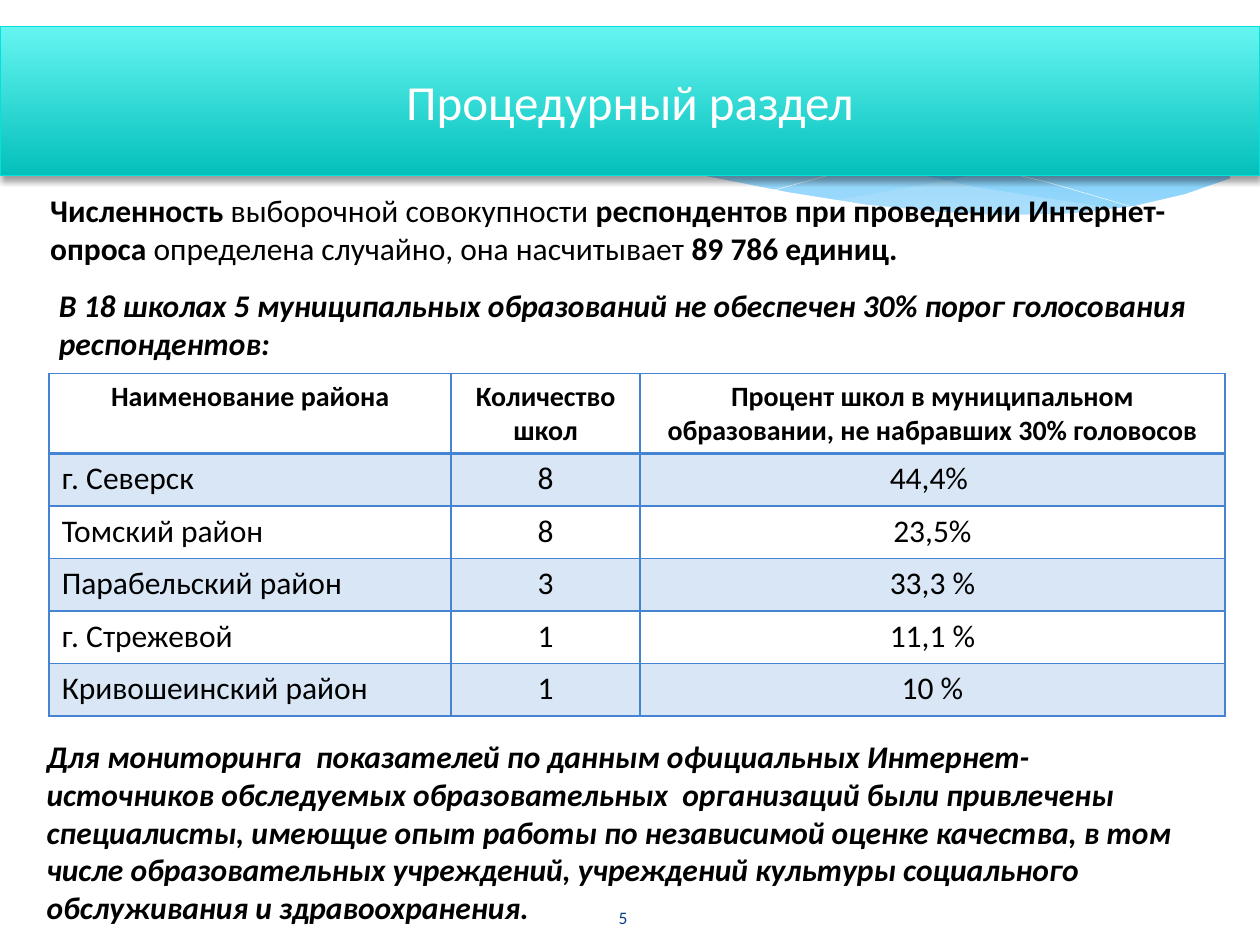
from lxml import etree
from pptx import Presentation
from pptx import util as u
from pptx.dml.color import RGBColor
from pptx.enum import shapes, text
from pptx.oxml.ns import qn

Pt = u.Pt
CENTER, LEFT = text.PP_ALIGN.CENTER, text.PP_ALIGN.LEFT

THEME = {
    "font": "Calibri", "ink": "000000", "white": "FFFFFF", "number": "073E87",
    "sky": ("0293E0", "83D3FE"), "wave": "C6E7FC",
    "banner": ("65F5F1", "04C0BB"), "banner_line": "05E0DB", "table": "4584D3",
    "title_size": 28, "body_size": 18, "head_size": 16, "number_size": 10,
}

# Content
TITLE = "Процедурный раздел"
PAGE_NUMBER = "5"
# Each run: wording, bold, italic
SAMPLE = [
    ("Численность", True, False),
    (" выборочной совокупности ", False, False),
    ("респондентов при проведении Интернет-опроса ", True, False),
    ("определена случайно, она насчитывает ", False, False),
    ("89 786 единиц.", True, False),
]
THRESHOLD = [("В 18 школах 5 муниципальных образований не обеспечен 30% порог "
              "голосования респондентов:", True, True)]
MONITORING = [("Для мониторинга  показателей по данным официальных "
               "Интернет-источников обследуемых образовательных  организаций были "
               "привлечены специалисты, имеющие опыт работы по независимой оценке "
               "качества, в том числе образовательных учреждений, учреждений культуры "
               "социального обслуживания и здравоохранения.", True, True)]
PARAGRAPHS = [  # runs and box: left, top, width, height
    (MONITORING, (19.5, 417.6, 669, 116.6)),
    (SAMPLE, (21.6, 105.8, 695.5, 51)),
    (THRESHOLD, (26.6, 159.8, 662.4, 51)),
]
DISTRICTS = [
    ("Наименование района", "Количество школ",
     "Процент школ в муниципальном образовании, не набравших 30% головосов"),
    ("г. Северск", "8", "44,4% "),
    ("Томский район", "8", "23,5%"),
    ("Парабельский район", "3", "33,3 %"),
    ("г. Стрежевой", "1", "11,1 %"),
    ("Кривошеинский район", "1", "10 %"),
]
COLUMN_WIDTHS = (229.7, 108, 334.1)
HEAD_HEIGHT, ROW_HEIGHT = 45.7, 30

# Outlines of the wave decoration
RIGHT_WAVE = [(702, 68), (663, 75), (620, 85), (542, 103), (476, 115), (518, 120),
              (562, 124), (601, 124), (634, 120), (663, 115), (683, 109), (703, 102),
              (703, 68)]
LONG_WAVE = [(643, 120), (603, 114), (558, 107), (508, 96), (453, 84), (410, 73),
             (370, 66), (318, 60), (260, 58), (206, 62), (261, 70), (323, 84),
             (382, 97), (433, 108), (490, 117), (539, 122), (581, 125), (617, 123)]
FALLING_LINE = [(222, 65), (251, 60), (300, 59), (352, 60), (401, 66), (458, 74),
                (500, 82), (547, 92), (598, 104), (653, 120)]
RISING_LINE = [(441, 109), (500, 93), (559, 80), (623, 67), (675, 60), (702, 58)]
WHITE_EDGE = [(703, 102), (677, 111), (647, 118), (612, 122), (571, 123), (536, 121),
              (495, 117), (451, 110), (400, 100), (342, 87), (282, 73), (228, 63),
              (180, 58), (127, 56), (86, 59), (48, 66), (26, 73), (17, 77),
              (17, 161), (703, 161)]
WAVES = [  # points, fill, opacity in percent; no fill means a white line
    (RIGHT_WAVE, THEME["wave"], 29),
    (LONG_WAVE, THEME["wave"], 40),
    (FALLING_LINE, None, None),
    (RISING_LINE, None, None),
    (WHITE_EDGE, THEME["white"], 100),
]


def rgb(name):
    return RGBColor.from_string(name)


def child(parent, tag, **attributes):
    element = etree.SubElement(parent, qn(tag))
    for key, value in attributes.items():
        element.set(key, str(value))
    return element


def set_fill(fill, parent, color, opacity=100):
    fill.solid()
    fill.fore_color.rgb = rgb(color)
    if opacity < 100:
        color_element = parent.find(qn("a:solidFill"))[0]
        child(color_element, "a:alpha", val=opacity * 1000)


def set_gradient(fill, colors, end):
    fill.gradient()
    fill.gradient_angle = 270  # counter-clockwise: top to bottom
    for stop, color, position in zip(fill.gradient_stops, colors, (0, end)):
        stop.color.rgb = rgb(color)
        stop.position = position


def write(frame, runs, size=THEME["body_size"], color=THEME["ink"], align=LEFT,
          anchor=text.MSO_ANCHOR.TOP):
    frame.word_wrap = True
    frame.vertical_anchor = anchor
    paragraph = frame.paragraphs[0]
    paragraph.alignment = align
    for wording, bold, italic in runs:
        run = paragraph.add_run()
        run.text = wording
        font = run.font
        font.name, font.size, font.bold, font.italic = THEME["font"], Pt(size), bold, italic
        font.color.rgb = rgb(color)


def add_box(slide, box, runs, **style):
    write(slide.shapes.add_textbox(*map(Pt, box)).text_frame, runs, **style)


def add_preset(slide, kind, box):
    shape = slide.shapes.add_shape(kind, *map(Pt, box))
    shape.shadow.inherit = False
    return shape


def add_wave(slide, points, color, opacity):
    start, *rest = [(Pt(x), Pt(y)) for x, y in points]
    builder = slide.shapes.build_freeform(*start)
    builder.add_line_segments(rest, close=color is not None)
    shape = builder.convert_to_shape()
    shape.shadow.inherit = False
    if color:
        set_fill(shape.fill, shape.element.spPr, color, opacity)
        shape.line.fill.background()
    else:
        shape.fill.background()
        shape.line.color.rgb = rgb(THEME["white"])
        shape.line.width = Pt(0.25)


def add_banner(slide):
    banner = add_preset(slide, shapes.MSO_SHAPE.RECTANGLE, (0, 15.1, 720, 85))
    set_gradient(banner.fill, THEME["banner"], 1)
    banner.line.color.rgb = rgb(THEME["banner_line"])
    banner.line.width = Pt(0.75)
    effects = banner.element.spPr.find(qn("a:effectLst"))
    shadow = child(effects, "a:outerShdw", blurRad=Pt(4), dist=Pt(2), dir=90 * 60000,
                   rotWithShape=0)
    child(child(shadow, "a:srgbClr", val=THEME["ink"]), "a:alpha", val=38000)
    write(banner.text_frame, [(TITLE, False, False)], size=THEME["title_size"],
          color=THEME["white"], align=CENTER, anchor=text.MSO_ANCHOR.MIDDLE)


def set_borders(properties, row):
    widths = {"a:lnL": 1, "a:lnR": 1, "a:lnT": 2 if row == 1 else 1,
              "a:lnB": 2 if row == 0 else 1}
    for index, (tag, width) in enumerate(widths.items()):
        line = child(properties, tag, w=Pt(width))
        child(child(line, "a:solidFill"), "a:srgbClr", val=THEME["table"])
        properties.insert(index, line)


def add_districts(slide):
    height = HEAD_HEIGHT + ROW_HEIGHT * (len(DISTRICTS) - 1)
    table = slide.shapes.add_table(len(DISTRICTS), len(COLUMN_WIDTHS), Pt(28.1), Pt(213.5),
                                   Pt(sum(COLUMN_WIDTHS)), Pt(height)).table
    table.first_row = table.horz_banding = False
    for column, width in zip(table.columns, COLUMN_WIDTHS):
        column.width = Pt(width)
    for i, values in enumerate(DISTRICTS):
        head = i == 0
        table.rows[i].height = Pt(HEAD_HEIGHT if head else ROW_HEIGHT)
        for j, value in enumerate(values):
            cell = table.cell(i, j)
            write(cell.text_frame, [(value, head, False)],
                  size=THEME["head_size" if head else "body_size"],
                  align=CENTER if head or j else LEFT)
            properties = cell._tc.get_or_add_tcPr()
            if i % 2:
                set_fill(cell.fill, properties, THEME["table"], 20)
            else:
                cell.fill.background()
            set_borders(properties, i)


def main():
    presentation = Presentation()
    presentation.slide_width, presentation.slide_height = Pt(720), Pt(540)
    slide = presentation.slides.add_slide(presentation.slide_layouts[6])

    # Sky panel and waves
    sky = add_preset(slide, shapes.MSO_SHAPE.ROUNDED_RECTANGLE, (18, 18, 684.7, 112.3))
    sky.adjustments[0] = 0.07
    set_gradient(sky.fill, THEME["sky"], 0.9)
    sky.line.fill.background()
    for points, color, opacity in WAVES:
        add_wave(slide, points, color, opacity)

    # Title, page number, paragraphs and table
    add_banner(slide)
    add_box(slide, (310.3, 509.8, 91.4, 28.8), [(PAGE_NUMBER, False, False)],
            size=THEME["number_size"], color=THEME["number"], align=CENTER,
            anchor=text.MSO_ANCHOR.MIDDLE)
    for runs, box in PARAGRAPHS:
        add_box(slide, box, runs)
    add_districts(slide)
    presentation.save("out.pptx")


if __name__ == "__main__":
    main()
